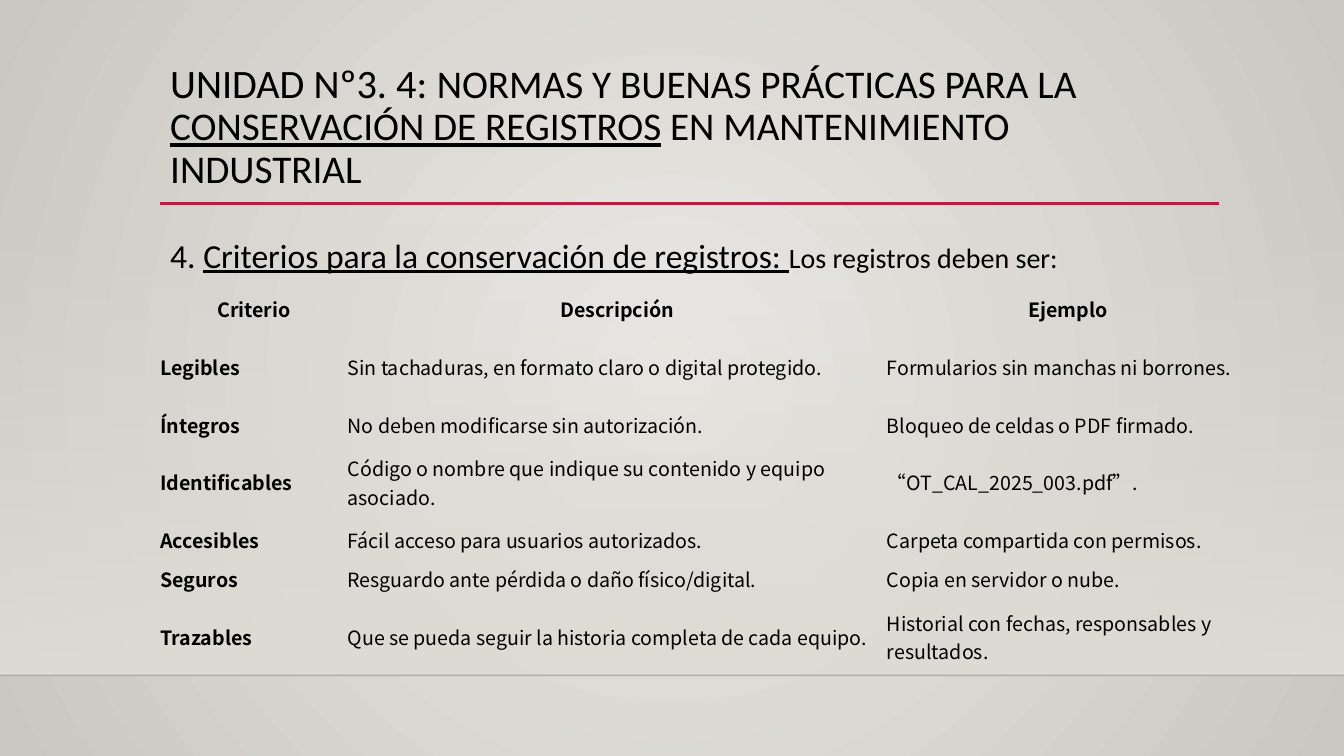
from lxml import etree
from pptx import Presentation
from pptx.dml.color import RGBColor as RGB
from pptx.enum.shapes import MSO_CONNECTOR as CONN, MSO_SHAPE as SHAPE
from pptx.enum.text import MSO_ANCHOR as ANCHOR, PP_ALIGN as ALIGN
from pptx.oxml.ns import qn
from pptx.util import Cm, Pt

COLORS = {
    "text": "000000", "accent": "B71E42", "floor": "DFDBD5", "edge": "000001",
    "center": "ECEAE7", "rim": "CAC7C1",
}
BODY, TABLE = "Calibri", "Noto Sans CJK SC"
NO_STYLE = "{2D5ABB26-0587-4C30-8999-92F81FD0307C}"
WIDTH, HEIGHT = 33.87, 19.05
LEFT, FLOOR_Y = 4.04, 17.02

COL_WIDTHS = [4.72, 13.59, 9.14]
LOW, HIGH = 0.97, 1.95
ROW_HEIGHTS = [LOW, HIGH, LOW, HIGH, LOW, LOW, HIGH]
ROWS = [
    ("Criterio", "Descripción", "Ejemplo"),
    ("Legibles", "Sin tachaduras, en formato claro o digital protegido.",
     "Formularios sin manchas ni borrones."),
    ("Íntegros", "No deben modificarse sin autorización.",
     "Bloqueo de celdas o PDF firmado."),
    ("Identificables", "Código o nombre que indique su contenido y equipo asociado.",
     "“OT_CAL_2025_003.pdf”."),
    ("Accesibles", "Fácil acceso para usuarios autorizados.",
     "Carpeta compartida con permisos."),
    ("Seguros", "Resguardo ante pérdida o daño físico/digital.",
     "Copia en servidor o nube."),
    ("Trazables", "Que se pueda seguir la historia completa de cada equipo.",
     "Historial con fechas, responsables y resultados."),
]
TITLE = [
    ("UNIDAD Nº3. 4: ", {"size": Pt(28.8)}),
    ("NORMAS Y BUENAS PRÁCTICAS PARA LA ", {"size": Pt(28)}),
    ("CONSERVACIÓN DE REGISTROS", {"size": Pt(28), "underline": True}),
    (" EN MANTENIMIENTO INDUSTRIAL", {"size": Pt(28)}),
]
HEADING = [
    ("4. ", {"size": Pt(24)}),
    ("Criterios para la conservación de registros: ",
     {"size": Pt(24), "underline": True}),
    ("Los registros deben ser:", {"size": Pt(20)}),
]


def color(name):
    return RGB.from_string(COLORS[name])


def set_attrs(obj, formats):
    for name, value in formats.items():
        setattr(obj, name, value)


def set_alpha(parent, percent):
    """Make the first colour found under parent partly transparent."""
    rgb = next(parent.iter(qn("a:srgbClr")))
    etree.SubElement(rgb, qn("a:alpha"), val=str(percent * 1000))


def set_gradient(fill, *names):
    fill.gradient()
    for stop, name in zip(fill.gradient_stops, names):
        stop.color.rgb = color(name)


def add_run(p, text, font, formats):
    r = p.add_run()
    r.text = text
    set_attrs(r.font, {"name": font, **formats})
    r.font.color.rgb = color("text")
    return r


def add_line(s, x, y, w, name, weight):
    line = s.shapes.add_connector(CONN.STRAIGHT, Cm(x), Cm(y), Cm(x + w), Cm(y))
    line.line.color.rgb = color(name)
    line.line.width = Pt(weight)
    etree.SubElement(line._element.spPr, qn("a:effectLst"))
    return line


def add_backdrop(s):
    """Radial background with a floor band that fades in from above."""
    set_gradient(s.background.fill, "center", "rim")
    lin = next(s._element.iter(qn("a:lin")))
    radial = etree.Element(qn("a:path"), path="circle")
    etree.SubElement(radial, qn("a:fillToRect"),
                     {side: "50000" for side in "ltrb"})
    lin.getparent().replace(lin, radial)

    top = 5.61
    floor = s.shapes.add_shape(SHAPE.RECTANGLE, 0, Cm(top), Cm(WIDTH),
                               Cm(FLOOR_Y - top))
    floor.shadow.inherit = False
    floor.line.fill.background()
    set_gradient(floor.fill, "floor", "floor")
    floor.fill.gradient_angle = 270
    set_alpha(floor._element.spPr, 0)
    edge = add_line(s, 0, FLOOR_Y, WIDTH, "edge", 1)
    set_alpha(edge._element.spPr, 20)


def add_text(s, x, y, w, h, runs, anchor, formats):
    tf = s.shapes.add_textbox(Cm(x), Cm(y), Cm(w), Cm(h)).text_frame
    set_attrs(tf, {"word_wrap": True, "vertical_anchor": anchor})
    p = tf.paragraphs[0]
    set_attrs(p, formats)
    for text, font_formats in runs:
        add_run(p, text, BODY, font_formats)


def add_criteria(s, x, y):
    frame = s.shapes.add_table(len(ROWS), len(COL_WIDTHS), Cm(x), Cm(y),
                               Cm(sum(COL_WIDTHS)), Cm(sum(ROW_HEIGHTS)))
    table = frame.table
    set_attrs(table, {"first_row": False, "horz_banding": False})
    next(table._tbl.iter(qn("a:tableStyleId"))).text = NO_STYLE
    for col, width in zip(table.columns, COL_WIDTHS):
        col.width = Cm(width)
    for row, height in zip(table.rows, ROW_HEIGHTS):
        row.height = Cm(height)
    for i, texts in enumerate(ROWS):
        for j, text in enumerate(texts):
            cell = table.cell(i, j)
            cell.fill.background()
            set_attrs(cell, {"vertical_anchor": ANCHOR.MIDDLE, "margin_left": 0,
                             "margin_right": 0, "margin_top": 0,
                             "margin_bottom": 0})
            p = cell.text_frame.paragraphs[0]
            p.alignment = ALIGN.LEFT if i else ALIGN.CENTER
            r = add_run(p, text, TABLE,
                        {"size": Pt(14), "bold": i == 0 or j == 0})
            etree.SubElement(r.font._element, qn("a:ea"), typeface=TABLE)


def main():
    prs = Presentation()
    set_attrs(prs, {"slide_width": Cm(WIDTH), "slide_height": Cm(HEIGHT)})
    s = prs.slides.add_slide(prs.slide_layouts[6])
    add_backdrop(s)
    add_line(s, LEFT, 5.13, 26.69, "accent", 2.5)
    add_text(s, LEFT, 1.27, 26.67, 3.89, TITLE, ANCHOR.MIDDLE,
             {"line_spacing": 0.9})
    add_text(s, LEFT, 5.59, 26.67, 9.58, HEADING, ANCHOR.TOP,
             {"line_spacing": 1.2})
    add_criteria(s, LEFT, 7.29)
    prs.save("out.pptx")


if __name__ == "__main__":
    main()
